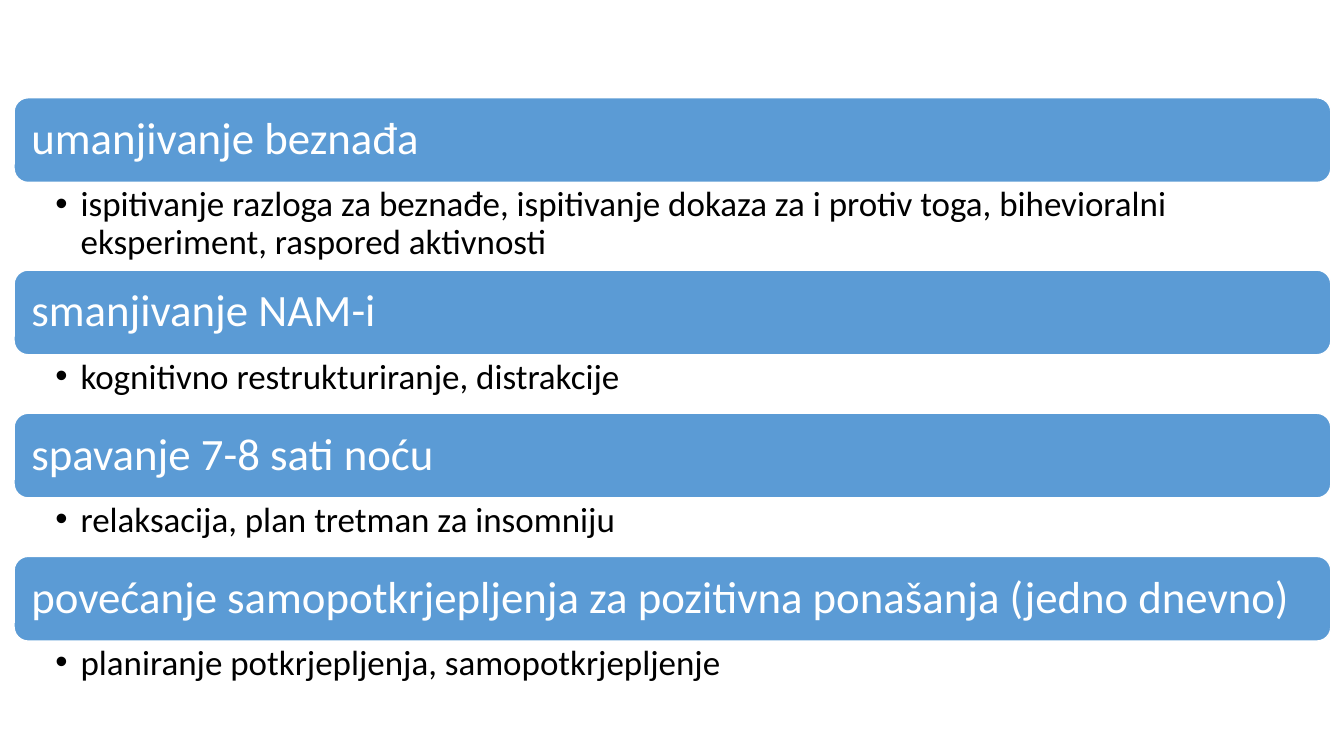
from lxml.etree import SubElement
from pptx import Presentation
from pptx.dml.color import RGBColor
from pptx.enum.shapes import MSO_SHAPE
from pptx.enum.text import MSO_ANCHOR, PP_ALIGN
from pptx.oxml.ns import qn
from pptx.util import Pt

PX = 9144  # 100 px to the inch
BLUE = RGBColor(0x5B, 0x9B, 0xD5)
WHITE = RGBColor(0xFF, 0xFF, 0xFF)
BLACK = RGBColor(0x00, 0x00, 0x00)

LEFT, TOP, WIDTH = 14, 97, 1306
BAR_HEIGHT = 84
GOALS = [
    ("umanjivanje beznađa",
     "ispitivanje razloga za beznađe, ispitivanje dokaza za i protiv toga, "
     "bihevioralni eksperiment, raspored aktivnosti", 87),
    ("smanjivanje NAM-i", "kognitivno restrukturiranje, distrakcije", 58),
    ("spavanje 7-8 sati noću", "relaksacija, plan tretman za insomniju", 58),
    ("povećanje samopotkrjepljenja za pozitivna ponašanja (jedno dnevno)",
     "planiranje potkrjepljenja, samopotkrjepljenje", 58),
]


def write(shape, text, size, color, insets):
    """Fill the shape with one paragraph; insets are left, top, right, bottom in px."""
    frame = shape.text_frame
    frame.word_wrap = True
    (frame.margin_left, frame.margin_top,
     frame.margin_right, frame.margin_bottom) = [inset * PX for inset in insets]
    paragraph = frame.paragraphs[0]
    paragraph.text = text
    paragraph.alignment = PP_ALIGN.LEFT
    paragraph.line_spacing = 0.9
    paragraph.font.name = "Calibri"
    paragraph.font.size = Pt(size)
    paragraph.font.color.rgb = color
    return paragraph


prs = Presentation()
prs.slide_width, prs.slide_height = 1333 * PX, 750 * PX
slide = prs.slides.add_slide(prs.slide_layouts.get_by_name("Blank"))

top = TOP
for goal, methods, methods_height in GOALS:
    bar = slide.shapes.add_shape(MSO_SHAPE.ROUNDED_RECTANGLE, LEFT * PX, top * PX,
                                 WIDTH * PX, BAR_HEIGHT * PX)
    bar.shadow.inherit = False
    bar.fill.solid()
    bar.fill.fore_color.rgb = BLUE
    bar.line.color.rgb = WHITE
    bar.line.width = Pt(1)
    bar.text_frame.vertical_anchor = MSO_ANCHOR.MIDDLE
    write(bar, goal, 32, WHITE, (13, 13, 13, 13))
    top += BAR_HEIGHT

    details = slide.shapes.add_textbox(LEFT * PX, top * PX, WIDTH * PX, methods_height * PX)
    item = write(details, methods, 25, BLACK, (41, 4, 25, 4))
    item.level = 1
    properties = item._p.get_or_add_pPr()
    properties.set("marL", str(25 * PX))
    properties.set("indent", str(-25 * PX))
    SubElement(properties, qn("a:buFont"), typeface="Arial")
    SubElement(properties, qn("a:buChar"), char="•")
    # Bullet elements must come before the default run properties.
    properties.append(properties.find(qn("a:defRPr")))
    top += methods_height

prs.save("out.pptx")
